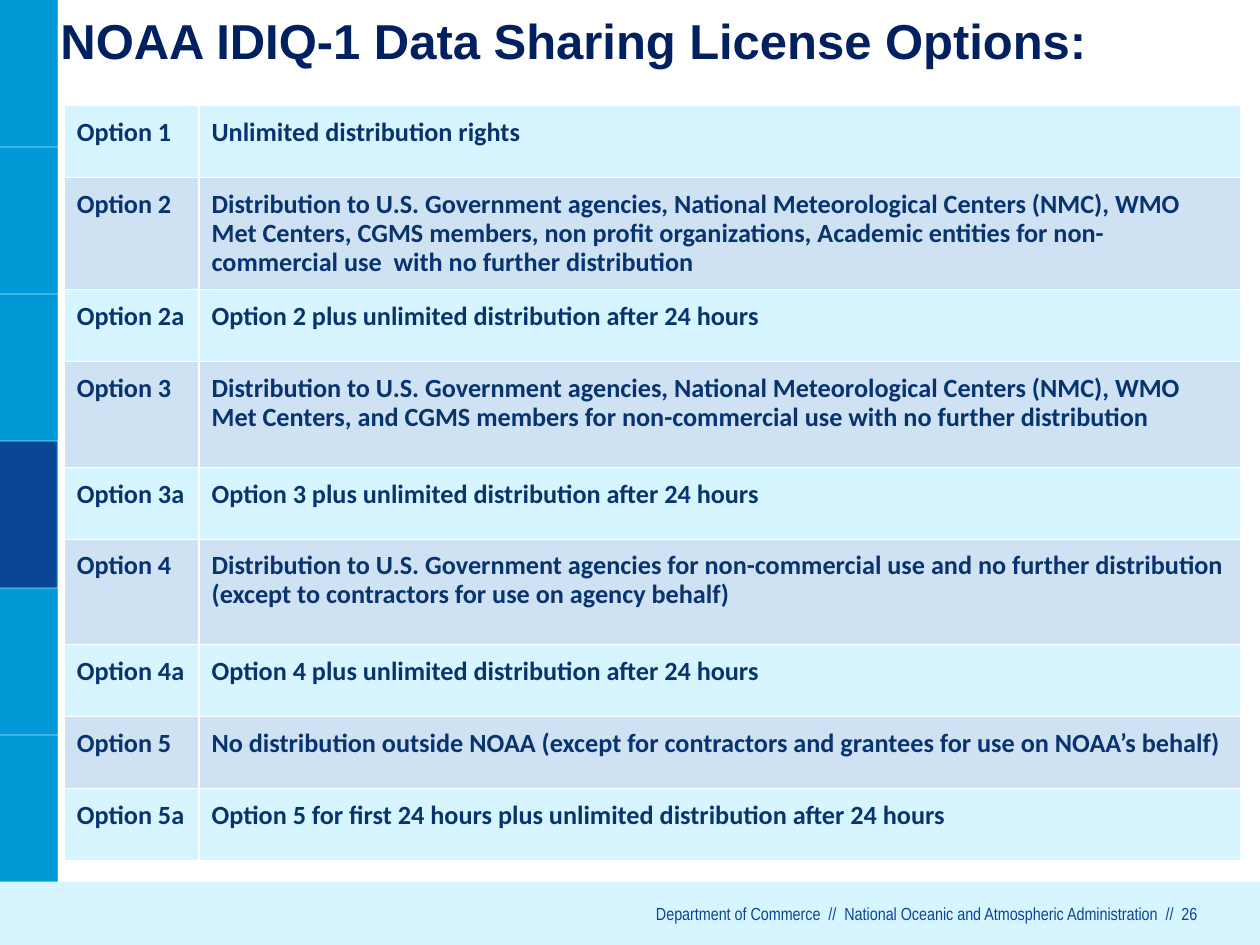
"""Builds the data sharing license options slide."""
import pptx
import pptx.util
import pptx.dml.color
import pptx.enum.shapes
import pptx.enum.text
import pptx.oxml.ns
import lxml.etree

Inches = pptx.util.Inches
Pt = pptx.util.Pt
qn = pptx.oxml.ns.qn

TITLE = "NOAA IDIQ-1 Data Sharing License Options:"
FOOTER = "Department of Commerce  //  National Oceanic and Atmospheric Administration  //  26"
OPTIONS = [
    ("Option 1", "Unlimited distribution rights", 0.57),
    ("Option 2", "Distribution to U.S. Government agencies, National Meteorological Centers (NMC), "
     "WMO Met Centers, CGMS members, non profit organizations, Academic entities for "
     "non-commercial use  with no further distribution", 0.89),
    ("Option 2a", "Option 2 plus unlimited distribution after 24 hours", 0.57),
    ("Option 3", "Distribution to U.S. Government agencies, National Meteorological Centers (NMC), "
     "WMO Met Centers, and CGMS members for non-commercial use with no further distribution", 0.84),
    ("Option 3a", "Option 3 plus unlimited distribution after 24 hours", 0.57),
    ("Option 4", "Distribution to U.S. Government agencies for non-commercial use and no further "
     "distribution (except to contractors for use on agency behalf)", 0.84),
    ("Option 4a", "Option 4 plus unlimited distribution after 24 hours", 0.57),
    ("Option 5", "No distribution outside NOAA (except for contractors and grantees for use on "
     "NOAA’s behalf)", 0.57),
    ("Option 5a", "Option 5 for first 24 hours plus unlimited distribution after 24 hours", 0.57),
]
COLUMN_WIDTHS = [1.07, 8.27]
COLORS = {"sidebar": "0099D8", "marker": "0B4596", "pale": "D6F5FF", "band": "CFE2F3",
          "title": "002060", "option": "07336F", "rule": "FFFFFF"}
SIDEBAR_WIDTH = 0.46
FOOTER_TOP = 7
SEGMENTS = 6
SEGMENT_HEIGHT = FOOTER_TOP / SEGMENTS
MARKED_SEGMENT = 3


def rgb(name):
    return pptx.dml.color.RGBColor.from_string(COLORS[name])


def add_block(slide, left, top, width, height, color):
    block = slide.shapes.add_shape(pptx.enum.shapes.MSO_SHAPE.RECTANGLE, Inches(left),
                                   Inches(top), Inches(width), Inches(height))
    block.shadow.inherit = False
    block.fill.solid()
    block.fill.fore_color.rgb = rgb(color)
    block.line.fill.background()


def add_rule(slide, x1, y1, x2, y2):
    rule = slide.shapes.add_connector(pptx.enum.shapes.MSO_CONNECTOR.STRAIGHT, Inches(x1),
                                      Inches(y1), Inches(x2), Inches(y2))
    rule.line.width = Pt(0.75)
    rule.line.color.rgb = rgb("rule")
    properties = rule._element.spPr
    color = properties.find(".//" + qn("a:srgbClr"))
    lxml.etree.SubElement(color, qn("a:alpha"), val="40000")
    lxml.etree.SubElement(properties, qn("a:effectLst"))


def style_text(paragraph, font, size, color, bold=False):
    for run in paragraph.runs:
        run.font.name = font
        run.font.size = Pt(size)
        run.font.bold = bold
        run.font.color.rgb = rgb(color)


def add_label(slide, left, top, width, height, text):
    frame = slide.shapes.add_textbox(Inches(left), Inches(top), Inches(width),
                                     Inches(height)).text_frame
    frame.margin_left = frame.margin_right = frame.margin_top = frame.margin_bottom = 0
    frame.word_wrap = True
    frame.text = text
    return frame


def fill_cell(cell, text, color):
    cell.fill.solid()
    cell.fill.fore_color.rgb = rgb(color)
    cell.margin_left = cell.margin_right = Inches(0.1)
    cell.margin_top = cell.margin_bottom = Inches(0.1)
    cell.text_frame.text = text
    paragraph = cell.text_frame.paragraphs[0]
    paragraph.line_spacing = 0.9
    style_text(paragraph, "Calibri", 15, "option", bold=True)
    properties = cell._tc.get_or_add_tcPr()
    for position, side in enumerate(("a:lnL", "a:lnR", "a:lnT", "a:lnB")):
        border = lxml.etree.Element(qn(side), w=str(Pt(0.75)))
        paint = lxml.etree.SubElement(border, qn("a:solidFill"))
        lxml.etree.SubElement(paint, qn("a:srgbClr"), val=COLORS["rule"])
        properties.insert(position, border)


def add_options(slide):
    heights = [height for _, _, height in OPTIONS]
    table = slide.shapes.add_table(len(OPTIONS), len(COLUMN_WIDTHS), Inches(0.51), Inches(0.84),
                                   Inches(sum(COLUMN_WIDTHS)), Inches(sum(heights))).table
    table.first_row = table.horz_banding = False
    for column, width in zip(table.columns, COLUMN_WIDTHS):
        column.width = Inches(width)
    for index, (option, rights, height) in enumerate(OPTIONS):
        table.rows[index].height = Inches(height)
        color = "band" if index % 2 else "pale"
        for column, text in enumerate((option, rights)):
            fill_cell(table.cell(index, column), text, color)


def main():
    deck = pptx.Presentation()
    deck.slide_width, deck.slide_height = Inches(10), Inches(7.5)
    slide = deck.slides.add_slide(deck.slide_layouts[6])

    add_block(slide, 0, 0, SIDEBAR_WIDTH, 7.5, "sidebar")
    add_block(slide, 0, MARKED_SEGMENT * SEGMENT_HEIGHT, 0.45, SEGMENT_HEIGHT, "marker")
    for segment in range(1, SEGMENTS + 1):
        add_rule(slide, 0, segment * SEGMENT_HEIGHT, SIDEBAR_WIDTH, segment * SEGMENT_HEIGHT)
    add_rule(slide, SIDEBAR_WIDTH, 0, SIDEBAR_WIDTH, 7.5)
    add_block(slide, 0, FOOTER_TOP, 10, 0.5, "pale")

    footer = add_label(slide, 1.58, 7.17, 7.92, 0.17, FOOTER)
    footer.paragraphs[0].alignment = pptx.enum.text.PP_ALIGN.RIGHT
    style_text(footer.paragraphs[0], "Arial Narrow", 10, "marker")

    title = add_label(slide, 0.48, -0.29, 9.71, 1.21, TITLE)
    title.vertical_anchor = pptx.enum.text.MSO_ANCHOR.MIDDLE
    style_text(title.paragraphs[0], "Arial", 28, "title", bold=True)

    add_options(slide)
    deck.save("out.pptx")


if __name__ == "__main__":
    main()
